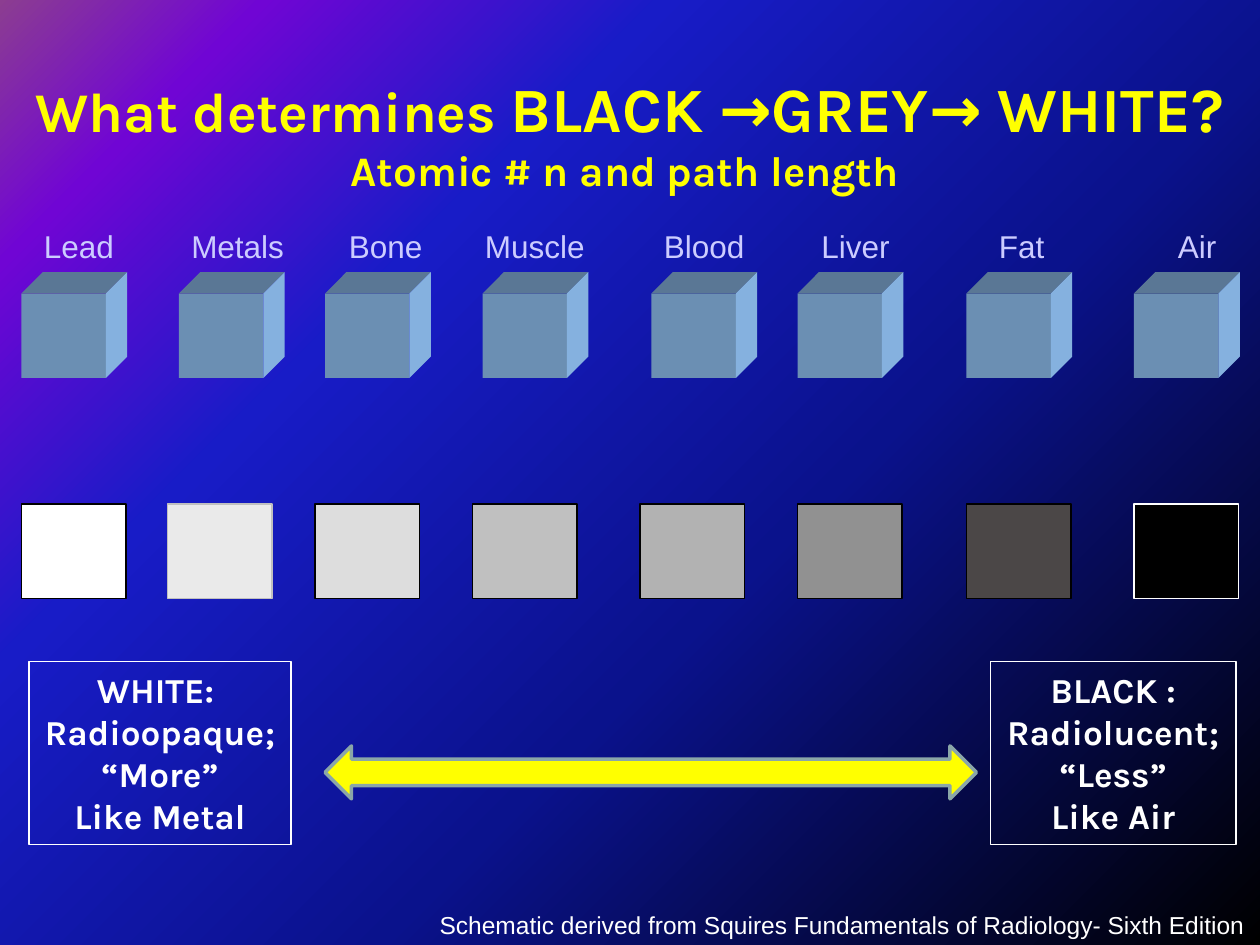
from pptx import Presentation
from pptx.dml.color import RGBColor
from pptx.enum.shapes import MSO_SHAPE as SHAPE
from pptx.enum.text import MSO_AUTO_SIZE as AUTO, PP_ALIGN as ALIGN
from pptx.oxml import parse_xml
from pptx.oxml.ns import nsdecls, qn
from pptx.util import Inches, Pt

WHITE = RGBColor(0xFF, 0xFF, 0xFF)
BLACK = RGBColor(0x00, 0x00, 0x00)
YELLOW = RGBColor(0xFF, 0xFF, 0x00)
LAVENDER = RGBColor(0xCC, 0xCC, 0xFF)
SILVER = RGBColor(0xC0, 0xC0, 0xC0)
ARROW_EDGE = RGBColor(0x8A, 0xA6, 0xA8)
CUBE_FRONT = RGBColor(0x6B, 0x8F, 0xB3)
CUBE_TOP = RGBColor(0x5A, 0x77, 0x95)
CUBE_SIDE = RGBColor(0x85, 0xB1, 0xDF)

BACKGROUND_STOPS = [(0, "000000"), (40, "0A128C"), (70, "181CC7"),
                    (88, "7005D4"), (100, "8C3D91")]

# name, label left, label width, cube left, swatch left, swatch fill, swatch edge
MATERIALS = [
    ("Lead", 0.25, 0.78, 0.17, 0.17, WHITE, BLACK),
    ("Metals", 1.42, 0.96, 1.42, 1.33, RGBColor(0xEA, 0xEA, 0xEA), SILVER),
    ("Bone", 2.67, 0.82, 2.58, 2.5, RGBColor(0xDD, 0xDD, 0xDD), BLACK),
    ("Muscle", 3.75, 1.01, 3.83, 3.75, SILVER, BLACK),
    ("Blood", 5.17, 0.86, 5.17, 5.08, RGBColor(0xB2, 0xB2, 0xB2), BLACK),
    ("Liver", 6.42, 0.76, 6.33, 6.33, RGBColor(0x91, 0x91, 0x91), BLACK),
    ("Fat", 7.83, 0.58, 7.67, 7.67, RGBColor(0x4B, 0x47, 0x47), BLACK),
    ("Air", 9.25, 0.53, 9, 9, BLACK, WHITE),
]


def paint(sp, fill=None, line=None, width=0.75):
    sp.shadow.inherit = False
    if fill is None:
        sp.fill.background()
    else:
        sp.fill.solid()
        sp.fill.fore_color.rgb = fill
    if line is None:
        sp.line.fill.background()
    else:
        sp.line.color.rgb = line
        sp.line.width = Pt(width)


def add_shape(s, kind, box, **style):
    sp = s.shapes.add_shape(kind, *map(Inches, box))
    paint(sp, **style)
    return sp


def add_face(s, points, fill):
    points = [(Inches(x), Inches(y)) for x, y in points]
    builder = s.shapes.build_freeform(*points[0], scale=1.0)
    builder.add_line_segments(points[1:], close=True)
    paint(builder.convert_to_shape(), fill)


def write(sp, paragraphs, size=18, font="Arial", color=WHITE, bold=False,
          align=ALIGN.LEFT, wrap=False):
    """Fill a shape; each paragraph is a list of (text, size or None) runs."""
    tf = sp.text_frame
    tf.word_wrap = wrap
    tf.auto_size = AUTO.SHAPE_TO_FIT_TEXT
    for i, runs in enumerate(paragraphs):
        p = tf.paragraphs[0] if i == 0 else tf.add_paragraph()
        p.alignment = align
        for text, run_size in runs:
            r = p.add_run()
            r.text = text
            r.font.size = Pt(run_size or size)
            r.font.name = font
            r.font.bold = bold
            r.font.color.rgb = color


def add_text(s, box, paragraphs, **style):
    write(s.shapes.add_textbox(*map(Inches, box)), paragraphs, **style)


def add_background(s):
    s.background.fill.gradient()
    old = next(s.element.iter(qn("a:gradFill")))
    stops = "".join(f'<a:gs pos="{pos * 1000}"><a:srgbClr val="{color}"/></a:gs>'
                    for pos, color in BACKGROUND_STOPS)
    old.getparent().replace(old, parse_xml(
        f'<a:gradFill {nsdecls("a")} rotWithShape="0"><a:gsLst>{stops}</a:gsLst>'
        '<a:path path="circle"><a:fillToRect l="100000" t="100000"/></a:path>'
        '</a:gradFill>'))


def add_cube(s, left, top, side, depth):
    right, bottom = left + side, top + side
    back_right, back_top = right + depth, top - depth
    add_shape(s, SHAPE.RECTANGLE, (left, top, side, side), fill=CUBE_FRONT)
    add_face(s, [(left, top), (left + depth, back_top),
                 (back_right, back_top), (right, top)], CUBE_TOP)
    add_face(s, [(right, top), (back_right, back_top),
                 (back_right, bottom - depth), (right, bottom)], CUBE_SIDE)


def add_materials(s):
    for name, label_x, label_w, cube_x, swatch_x, fill, edge in MATERIALS:
        add_cube(s, cube_x, 2.33, 0.67, 0.17)
        add_shape(s, SHAPE.RECTANGLE, (swatch_x, 4, 0.83, 0.75),
                  fill=fill, line=edge)
        add_text(s, (label_x, 1.75, label_w, 0.4), [[(name, None)]],
                 color=LAVENDER)


def add_end_box(s, box, lines):
    sp = add_shape(s, SHAPE.RECTANGLE, box, line=WHITE)
    write(sp, [[(line, None)] for line in lines], size=20, font="Karla",
          bold=True, align=ALIGN.CENTER)


def main():
    prs = Presentation()
    prs.slide_width, prs.slide_height = Inches(10), Inches(7.5)
    s = prs.slides.add_slide(prs.slide_layouts[6])
    add_background(s)
    add_materials(s)
    add_text(s, (0, 0.5, 10, 1.11),
             [[("What determines ", 32), ("BLACK →GREY→ WHITE?", 36)],
              [("Atomic # n and path length ", 24)]],
             font="Karla", color=YELLOW, bold=True, align=ALIGN.CENTER, wrap=True)
    add_text(s, (3.39, 7.17, 6.61, 0.33),
             [[("Schematic derived from Squires Fundamentals of Radiology- "
                "Sixth Edition", None)]], size=14)
    add_end_box(s, (0.23, 5.25, 2.08, 1.45),
                ["WHITE: ", "Radioopaque; ", "“More”", "Like Metal"])
    add_end_box(s, (7.86, 5.25, 1.95, 1.45),
                ["BLACK :", "Radiolucent; ", "“Less”", "Like Air"])
    add_shape(s, SHAPE.LEFT_RIGHT_ARROW, (2.58, 5.92, 5.17, 0.42),
              fill=YELLOW, line=ARROW_EDGE, width=2)
    prs.save("out.pptx")


if __name__ == "__main__":
    main()
